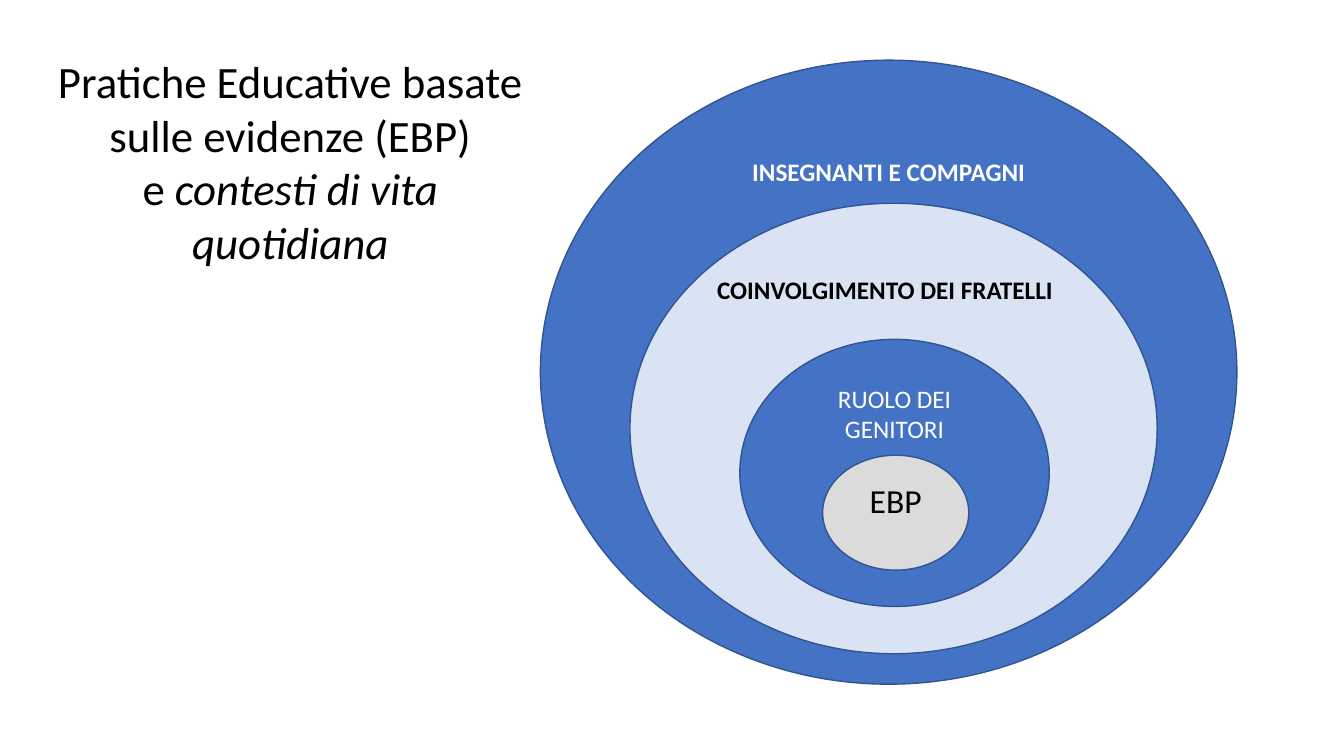
from collections import namedtuple

from pptx import Presentation
from pptx import util as u
from pptx.dml import color
from pptx.enum import shapes, text

Box = namedtuple("Box", "left top width height")
Ring = namedtuple("Ring", "label box fill ink size bold align")

FONT = "Calibri"
BLUE, PALE, GREY, OUTLINE = "4472C4", "DAE3F3", "DBDBDB", "325491"
WHITE, BLACK = "FFFFFF", "000000"
CENTER, LEFT = text.PP_ALIGN.CENTER, text.PP_ALIGN.LEFT

RINGS = [
    Ring("INSEGNANTI E COMPAGNI", Box(0, 0, 497.5, 445.7), BLUE, WHITE, 18, True, CENTER),
    Ring("COINVOLGIMENTO DEI FRATELLI", Box(64, 102.2, 376.6, 321.8), PALE, BLACK, 18, True, LEFT),
    Ring("RUOLO DEI GENITORI", Box(142.5, 199.4, 221, 190.8), BLUE, WHITE, 18, False, CENTER),
    Ring("EBP", Box(201.6, 282.2, 104.4, 82.1), GREY, BLACK, 24, False, CENTER),
]
TITLE_LINES = [
    [("Pratiche Educative basate sulle evidenze (EBP)", False)],
    [("e ", False), ("contesti di vita quotidiana", True)],
]


def rgb(value):
    return color.RGBColor.from_string(value)


def format_paragraph(para, size, ink, align):
    para.alignment = align
    para.font.name = FONT
    para.font.size = u.Pt(size)
    para.font.color.rgb = rgb(ink)


def add_title(page, box):
    title = page.shapes.title
    title.left, title.top, title.width, title.height = map(u.Pt, box)
    frame = title.text_frame
    frame.word_wrap = True
    frame.auto_size = text.MSO_AUTO_SIZE.NONE
    frame.vertical_anchor = text.MSO_ANCHOR.TOP
    for index, spans in enumerate(TITLE_LINES):
        para = frame.add_paragraph() if index else frame.paragraphs[0]
        format_paragraph(para, 32, BLACK, CENTER)
        for words, italic in spans:
            span = para.add_run()
            span.text = words
            if italic:
                span.font.italic = True


def add_ring(page, ring, left, top):
    place = ring.box._replace(left=left + ring.box.left, top=top + ring.box.top)
    ellipse = page.shapes.add_shape(shapes.MSO_SHAPE.OVAL, *map(u.Pt, place))
    ellipse.shadow.inherit = False
    ellipse.fill.solid()
    ellipse.fill.fore_color.rgb = rgb(ring.fill)
    ellipse.line.color.rgb = rgb(OUTLINE)
    ellipse.line.width = u.Pt(1)
    frame = ellipse.text_frame
    frame.word_wrap = True
    frame.vertical_anchor = text.MSO_ANCHOR.TOP
    para = frame.paragraphs[0]
    para.text = ring.label
    format_paragraph(para, ring.size, ring.ink, ring.align)
    para.font.bold = ring.bold
    return para


def add_context_rings(page, left, top):
    for ring in RINGS:
        para = add_ring(page, ring, left, top)
    para.line_spacing = 1.07
    para.space_after = u.Pt(8)


def main():
    deck = Presentation()
    deck.slide_width, deck.slide_height = u.Pt(960), u.Pt(540)
    page = deck.slides.add_slide(deck.slide_layouts.get_by_name("Title Only"))
    add_title(page, Box(31, 34.6, 352.8, 162.7))
    add_context_rings(page, 386, 43)
    deck.save("out.pptx")


if __name__ == "__main__":
    main()
